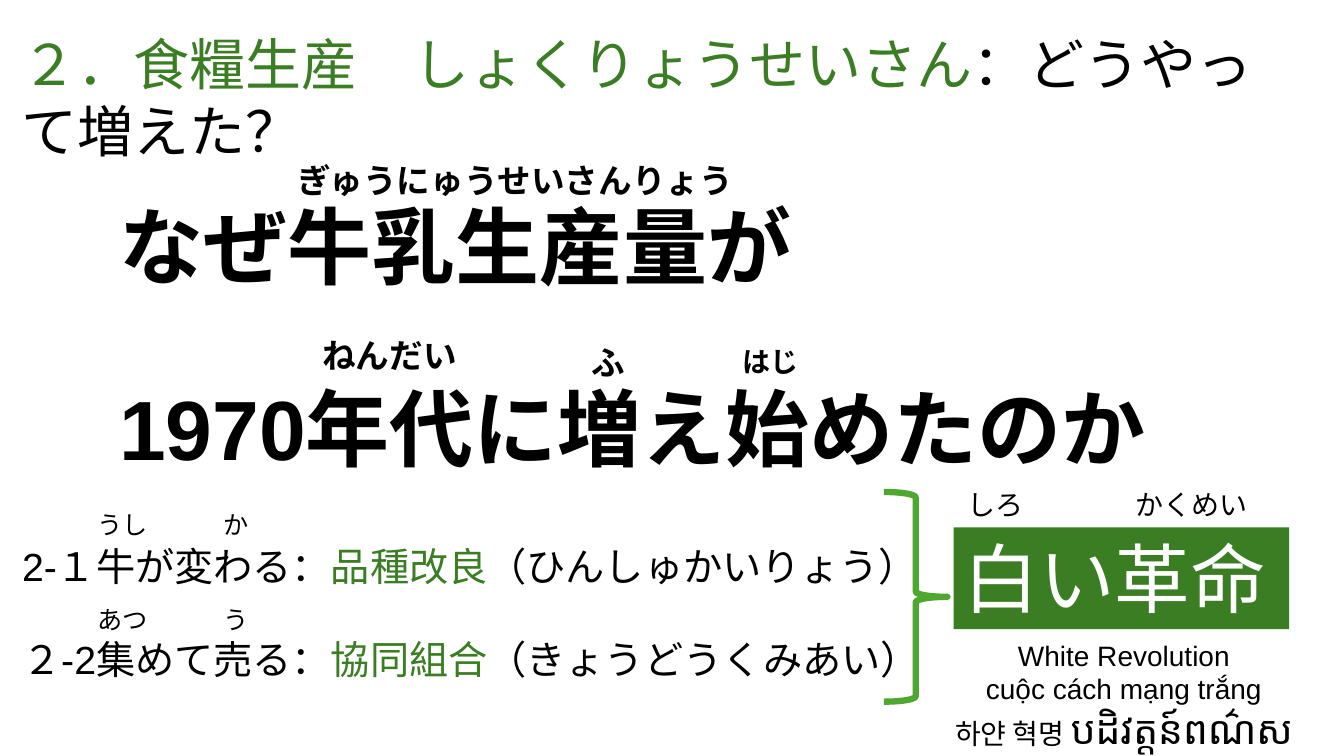
import pptx
import pptx.util
import pptx.dml.color
import pptx.enum.shapes
import pptx.enum.text
import lxml.etree

Pt = pptx.util.Pt
ALIGN = pptx.enum.text.PP_ALIGN
ANCHOR = pptx.enum.text.MSO_ANCHOR
SHAPE = pptx.enum.shapes.MSO_SHAPE
NS = "http://schemas.openxmlformats.org/drawingml/2006/main"

BLACK = "000000"
WHITE = "FFFFFF"
GREEN = "3A7D22"
BRIGHT_GREEN = "4EA72E"


def color(value):
    return pptx.dml.color.RGBColor.from_string(value)


class Deck:
    """Holds the style and the current slide; all lengths are in points."""

    font = "Arial"

    def __init__(self, width, height):
        self.prs = pptx.Presentation()
        self.prs.slide_width, self.prs.slide_height = Pt(width), Pt(height)

    def add_slide(self, layout):
        self.s = self.prs.slides.add_slide(self.prs.slide_layouts[layout])

    def fill_text(self, sp, paragraphs, size, bold=False, align=ALIGN.LEFT,
                  anchor=ANCHOR.TOP, fill=BLACK, gap=0, spacing=1.0):
        """Each paragraph is a list of (text, colour, size) runs; None inherits."""
        tf = sp.text_frame
        tf.word_wrap = True
        tf.auto_size = pptx.enum.text.MSO_AUTO_SIZE.NONE
        tf.vertical_anchor = anchor
        for i, runs in enumerate(paragraphs):
            p = tf.paragraphs[0] if i == 0 else tf.add_paragraph()
            p.alignment, p.line_spacing = align, spacing
            p.space_before = Pt(gap if i else 0)
            p.font.name, p.font.size, p.font.bold = self.font, Pt(size), bold
            p.font.color.rgb = color(fill)
            for text, run_color, run_size in runs:
                r = p.add_run()
                r.text = text
                if run_color:
                    r.font.color.rgb = color(run_color)
                if run_size:
                    r.font.size = Pt(run_size)
        return sp

    def placeholder(self, index, box, paragraphs, size, **style):
        sp = self.s.placeholders[index]
        sp.left, sp.top, sp.width, sp.height = map(Pt, box)
        return self.fill_text(sp, paragraphs, size, **style)

    def plain_list(self, index, box, paragraphs, size, **style):
        sp = self.placeholder(index, box, paragraphs, size, **style)
        for p in sp.text_frame.paragraphs:
            pPr = p._p.get_or_add_pPr()
            pPr.set("marL", "0")
            pPr.set("indent", "0")
            bullet = lxml.etree.Element(f"{{{NS}}}buNone")
            pPr.find(f"{{{NS}}}defRPr").addprevious(bullet)

    def text(self, box, paragraphs, size, **style):
        sp = self.s.shapes.add_textbox(*map(Pt, box))
        return self.fill_text(sp, paragraphs, size, **style)

    def reading(self, box, text, size, bold=False, tab=None):
        """Small kana above a word; a tab stop sets the second reading."""
        sp = self.text(box, [[(text, None, None)]], size, bold=bold)
        if tab:
            pPr = sp.text_frame.paragraphs[0]._p.get_or_add_pPr()
            tabs = lxml.etree.Element(f"{{{NS}}}tabLst")
            lxml.etree.SubElement(tabs, f"{{{NS}}}tab",
                                  pos=str(Pt(tab)), algn="l")
            pPr.find(f"{{{NS}}}defRPr").addprevious(tabs)

    def shape(self, kind, box, fill=None, line=None, weight=0):
        sp = self.s.shapes.add_shape(kind, *map(Pt, box))
        sp.shadow.inherit = False
        if fill:
            sp.fill.solid()
            sp.fill.fore_color.rgb = color(fill)
        else:
            sp.fill.background()
        if line:
            sp.line.color.rgb = color(line)
            sp.line.width = Pt(weight)
        else:
            sp.line.fill.background()
        return sp


def main():
    d = Deck(960, 540)
    d.add_slide(1)

    # Main question
    d.placeholder(0, (77.8, 192.2, 804.2, 104.4),
                  [[("なぜ牛乳生産量が", None, None)],
                   [("1970年代に増え始めたのか", None, None)]],
                  60, bold=True, anchor=ANCHOR.MIDDLE, gap=65, spacing=0.9)
    for left, top, width, text, size in (
            (205.2, 110.9, 330.5, "ぎゅうにゅうせいさんりょう", 24),
            (223.2, 235.4, 131, "ねんだい", 24),
            (415.4, 240.5, 51.1, "ふ", 24),
            (523.4, 242.6, 58.3, "はじ", 20)):
        d.reading((left, top, width, size * 1.5), text, size, bold=True)

    # Section heading
    d.text((8.6, 17.3, 915.8, 55.4),
           [[("２．食糧生産\u3000しょくりょうせいさん".replace("\u3000", "　"), GREEN, None),
             ("：どうやって増えた？", None, None)]], 40)

    # Two causes and the brace that joins them
    d.shape(SHAPE.RIGHT_BRACE, (631.4, 351.4, 45.4, 149.8),
            line=BRIGHT_GREEN, weight=4.5)
    d.plain_list(1, (8.6, 383.8, 689.8, 108.7),
                 [[(lead, None, None), (term, GREEN, None), (kana, None, None)]
                  for lead, term, kana in (
                      ("2-１牛が変わる：", "品種改良", "（ひんしゅかいりょう）"),
                      ("２-2集めて売る：", "協同組合", "（きょうどうくみあい）"))],
                 28, gap=33)
    for top, text in ((360, "うし\tか"), (428.4, "あつ\tう")):
        d.reading((62.6, top, 160, 28.8), text, 18, tab=90)

    # Result: the White Revolution
    banner = d.shape(SHAPE.RECTANGLE, (681.1, 376.6, 239.8, 72.7), fill=GREEN)
    d.fill_text(banner, [[("白い革命", None, None)]], 54, fill=WHITE)
    d.reading((684, 344.9, 275, 31.7), "しろ\tかくめい", 20, tab=120)
    d.text((654.5, 452.2, 296.6, 90),
           [[("White Revolution", None, None)],
            [("cuộc cách mạng trắng", None, None)],
            [("하얀 혁명 ", None, None), ("បដិវត្តន៍ពណ៌ស", None, 28)]],
           20, align=ALIGN.CENTER)

    d.prs.save("out.pptx")


if __name__ == "__main__":
    main()
